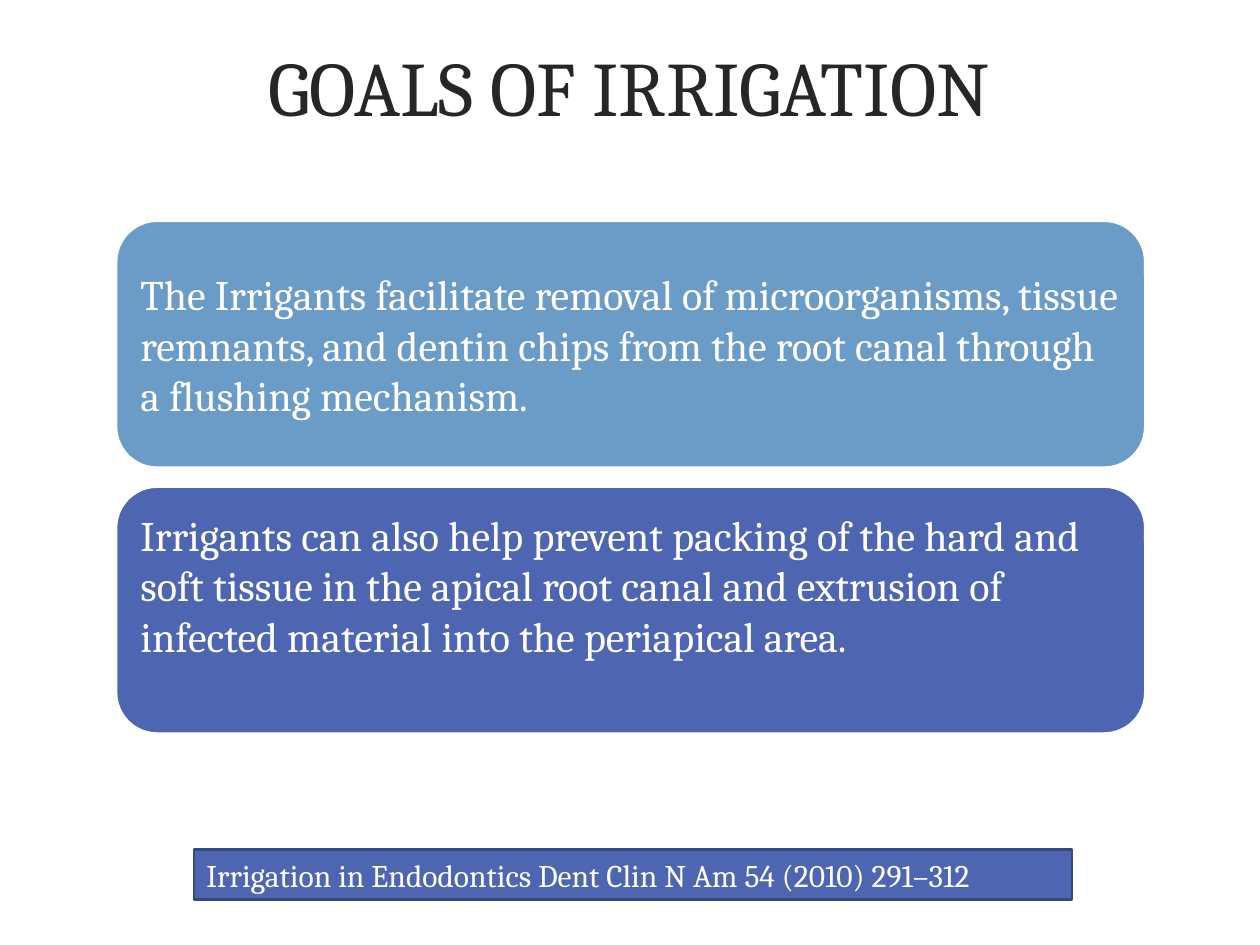
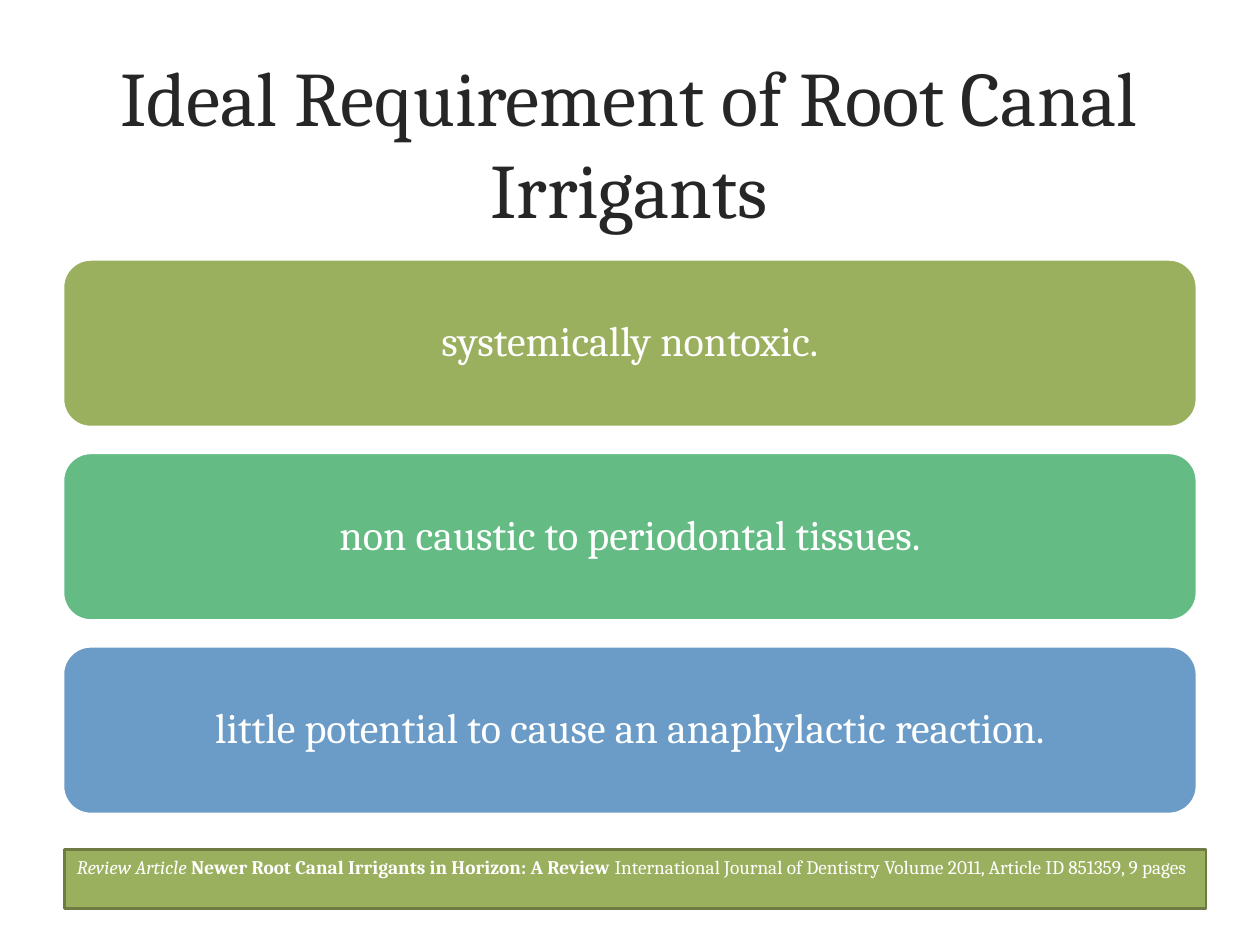
from pptx import Presentation
from pptx.dml.color import RGBColor
from pptx.enum import shapes, text as t
from pptx.util import Cm, Pt

FONT = "Cambria"
WHITE, DARK = "FFFFFF", "262626"
BLUE, INDIGO, OLIVE, GREEN = "6B9BC7", "4E66B2", "9BB05E", "64BC84"
ROUND = shapes.MSO_SHAPE.ROUNDED_RECTANGLE
RECT = shapes.MSO_SHAPE.RECTANGLE
LEFT, MID = t.PP_ALIGN.LEFT, t.PP_ALIGN.CENTER


def paint(target, color):
    """Give a font, fill or line a solid colour."""
    if hasattr(target, "solid"):
        target.solid()
        target.fore_color.rgb = RGBColor.from_string(color)
    else:
        target.color.rgb = RGBColor.from_string(color)


def write(slide, runs, box, kind=None, fill=None, edge=WHITE, size=24, color=WHITE,
          align=LEFT, anchor=t.MSO_ANCHOR.MIDDLE, pad=(0.25, 0.25), lines=1.0):
    """Add text, on a shape if kind is given; runs are (words, style) pairs."""
    area = [Cm(n) for n in box]
    if kind is None:
        item = slide.shapes.add_textbox(*area)
    else:
        item = slide.shapes.add_shape(kind, *area)
        item.shadow.inherit = False
        paint(item.fill, fill)
        paint(item.line, edge)
        item.line.width = Pt(1.5)
    frame = item.text_frame
    frame.word_wrap = True
    frame.vertical_anchor = anchor
    frame.margin_left = frame.margin_right = Cm(0.25)
    frame.margin_top, frame.margin_bottom = Cm(pad[0]), Cm(pad[1])
    para = frame.paragraphs[0]
    para.alignment = align
    para.line_spacing = lines
    for words, style in runs:
        run = para.add_run()
        run.text = words
        run.font.name = FONT
        run.font.size = Pt(size)
        run.font.bold = style == "bold"
        run.font.italic = style == "italic"
        paint(run.font, color)


deck = Presentation()
deck.slide_width, deck.slide_height = Cm(25.4), Cm(19.05)

goals = [
    ("The Irrigants facilitate removal of microorganisms, tissue remnants, and dentin "
     "chips from the root canal through a flushing mechanism.", BLUE, (0.25, 0.25)),
    ("Irrigants can also help prevent packing of the hard and soft tissue in the apical "
     "root canal and extrusion of infected material into the periapical area.",
     INDIGO, (0.25, 1.27)),
]
needs = [
    ("systemically nontoxic.", OLIVE, (0.25, 0.25)),
    ("non caustic to periodontal tissues.", GREEN, (0.25, 0.25)),
    ("little potential to cause an anaphylactic reaction.", BLUE, (0.25, 0.25)),
]
pages = [
    dict(title="GOALS OF IRRIGATION", top=-0.28, cards=goals,
         first=(2.34, 4.45, 20.75, 4.98), step=5.36, style=dict(align=LEFT),
         cite=[("Irrigation in Endodontics Dent Clin N Am 54 (2010) 291–312", "")],
         foot=dict(box=(3.91, 17.12, 17.7, 1.02), fill=INDIGO, edge="37487E", size=18)),
    dict(title="Ideal Requirement of Root Canal Irrigants", top=0.85, cards=needs,
         first=(1.27, 5.23, 22.86, 3.38), step=3.9, style=dict(align=MID, lines=0.9),
         cite=[("Review Article ", "italic"),
               ("Newer Root Canal Irrigants in Horizon: A Review ", "bold"),
               ("International Journal of Dentistry Volume 2011, Article ID 851359, "
                "9 pages", "")],
         foot=dict(box=(1.3, 17.12, 23.01, 1.19), fill=OLIVE, edge="6E7C43", size=11)),
]

for page in pages:
    slide = deck.slides.add_slide(deck.slide_layouts[6])
    write(slide, [(page["title"], "")], (1.52, page["top"], 22.33, 4.01),
          size=44, color=DARK, align=MID, pad=(0.13, 0.13))
    left, top, wide, high = page["first"]
    for i, (words, fill, pad) in enumerate(page["cards"]):
        write(slide, [(words, "")], (left, top + i * page["step"], wide, high),
              kind=ROUND, fill=fill, pad=pad, **page["style"])
    write(slide, page["cite"], kind=RECT, anchor=t.MSO_ANCHOR.TOP,
          pad=(0.13, 0.13), **page["foot"])

deck.save("out.pptx")
